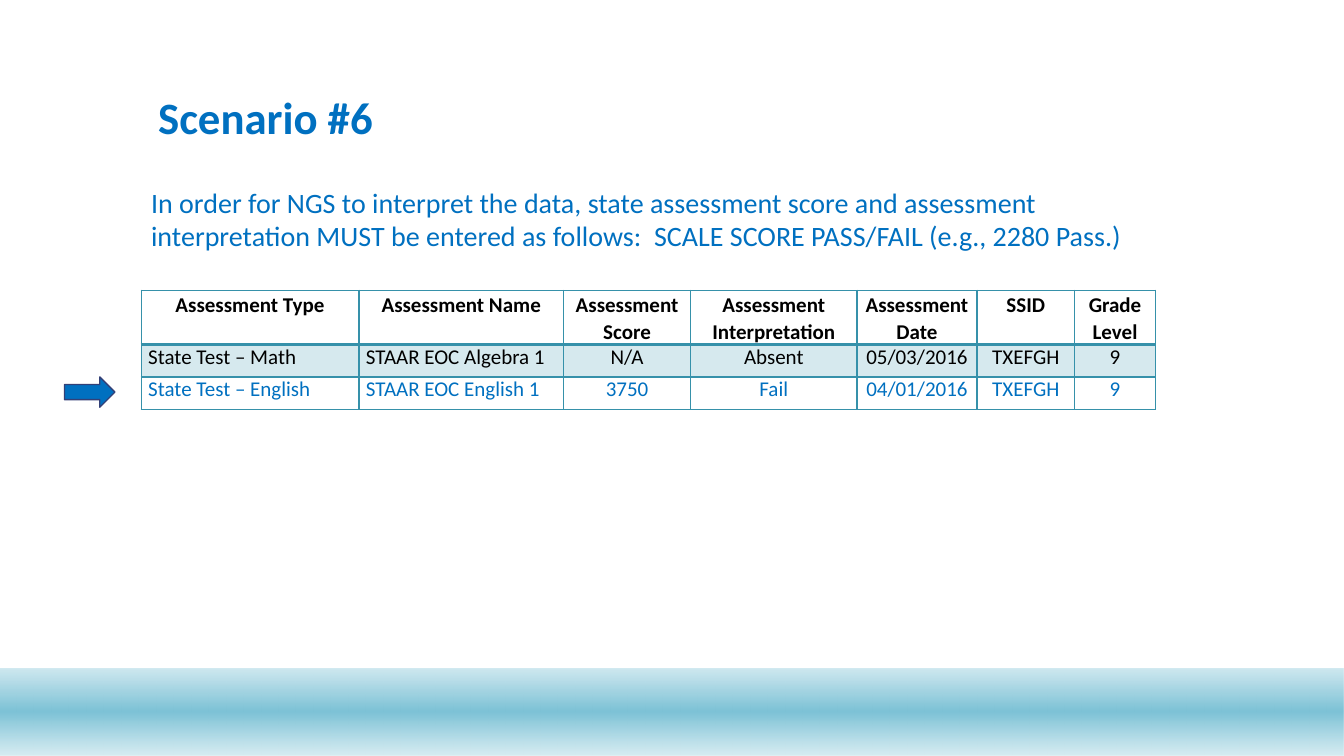
from lxml import etree
from pptx import Presentation
from pptx import util as u
from pptx.dml.color import RGBColor
from pptx.enum import shapes, text
from pptx.oxml import ns

BLUE, TEAL, BLACK = "0070C0", "3691AA", "000000"
HEAD = ["Assessment Type", "Assessment Name", "Assessment Score",
        "Assessment Interpretation", "Assessment Date", "SSID", "Grade Level"]
MATH = ["State Test – Math", "STAAR EOC Algebra 1", "N/A", "Absent",
        "05/03/2016", "TXEFGH", "9"]
ENGLISH = ["State Test – English", "STAAR EOC English 1", "3750", "Fail",
           "04/01/2016", "TXEFGH", "9"]


def rgb(code):
    return RGBColor.from_string(code)


def sub(node, tag, **attrs):
    return etree.SubElement(node, ns.qn(tag), attrs)


def tint(node, code, alpha):
    color = sub(node, "a:srgbClr", val=code)
    sub(color, "a:alpha", val=str(alpha * 1000))


class Deck:
    """Holds the style and the current slide."""

    def __init__(self):
        self.font = "Calibri"
        self.prs = Presentation()
        self.prs.slide_width = u.Inches(13.33)
        self.prs.slide_height = u.Inches(7.5)
        self.slide = self.prs.slides.add_slide(self.prs.slide_layouts[6])

    def place(self, box):
        return [u.Inches(n) for n in box]

    def fill_text(self, frame, words, size, color, bold=False):
        frame.word_wrap = True
        frame.text = words
        para = frame.paragraphs[0]
        font = para.runs[0].font
        font.name, font.size, font.bold = self.font, u.Pt(size), bold
        font.color.rgb = rgb(color)
        return para

    def label(self, box, words, size, bold=False, low=False):
        frame = self.slide.shapes.add_textbox(*self.place(box)).text_frame
        para = self.fill_text(frame, words, size, BLUE, bold)
        if low:
            frame.vertical_anchor = text.MSO_ANCHOR.BOTTOM
            para.line_spacing = 0.9

    def shape(self, kind, box):
        item = self.slide.shapes.add_shape(kind, *self.place(box))
        item.shadow.inherit = False
        return item

    def band(self, box, stops):
        item = self.shape(shapes.MSO_SHAPE.RECTANGLE, box)
        item.line.fill.background()
        item.fill.gradient()
        grad = item.element.spPr.find(ns.qn("a:gradFill"))
        for child in list(grad):
            grad.remove(child)
        group = sub(grad, "a:gsLst")
        for pos, code, alpha in stops:
            tint(sub(group, "a:gs", pos=str(pos * 1000)), code, alpha)
        sub(grad, "a:lin", ang="5400000", scaled="0")

    def arrow(self, box):
        item = self.shape(shapes.MSO_SHAPE.RIGHT_ARROW, box)
        item.fill.solid()
        item.fill.fore_color.rgb = rgb(BLUE)
        item.line.color.rgb = rgb("334077")
        item.line.width = u.Pt(1)

    def cell(self, cell, words, row, col):
        cell.margin_left = cell.margin_right = u.Inches(0.07)
        cell.margin_top = cell.margin_bottom = 0
        color = BLUE if row == 2 else BLACK
        para = self.fill_text(cell.text_frame, words, 15, color, row == 0)
        left = row > 0 and col < 2
        para.alignment = text.PP_ALIGN.JUSTIFY if left else text.PP_ALIGN.CENTER
        if row == 0:
            para.line_spacing = 1.07
        props = cell._tc.get_or_add_tcPr()
        for side in "LRTB":
            thick = (row, side) in ((0, "B"), (1, "T"))
            line = sub(props, "a:ln" + side, w=str(u.Pt(2 if thick else 1)))
            sub(sub(line, "a:solidFill"), "a:srgbClr", val=TEAL)
        if row == 1:
            tint(sub(props, "a:solidFill"), TEAL, 20)
        else:
            cell.fill.background()

    def table(self, box, widths, heights, data):
        grid = self.slide.shapes.add_table(
            len(data), len(widths), *self.place(box)).table
        grid.first_row = grid.horz_banding = False
        for col, width in zip(grid.columns, widths):
            col.width = u.Inches(width)
        for row, height in zip(grid.rows, heights):
            row.height = u.Inches(height)
        for row, line in enumerate(data):
            for col, words in enumerate(line):
                self.cell(grid.cell(row, col), words, row, col)


def main():
    deck = Deck()
    deck.band((0, 6.63, 13.33, 0.87),
              [(1, "7DC2D6", 38), (49, "7DC2D6", 100), (100, "D4EBF1", 89)])
    deck.label((1.47, 0.29, 10.4, 1.19), "Scenario #6", 32, True, True)
    deck.table((1.4, 2.88, 10.05, 1.17),
               [2.16, 2.03, 1.26, 1.65, 1.19, 0.97, 0.8],
               [0.54, 0.32, 0.32], [HEAD, MATH, ENGLISH])
    deck.label((1.4, 1.79, 10.4, 0.77),
               "In order for NGS to interpret the data, state assessment score "
               "and assessment interpretation MUST be entered as follows:  "
               "SCALE SCORE PASS/FAIL (e.g., 2280 Pass.)", 20)
    deck.arrow((0.64, 3.74, 0.5, 0.3))
    deck.prs.save("out.pptx")


if __name__ == "__main__":
    main()
